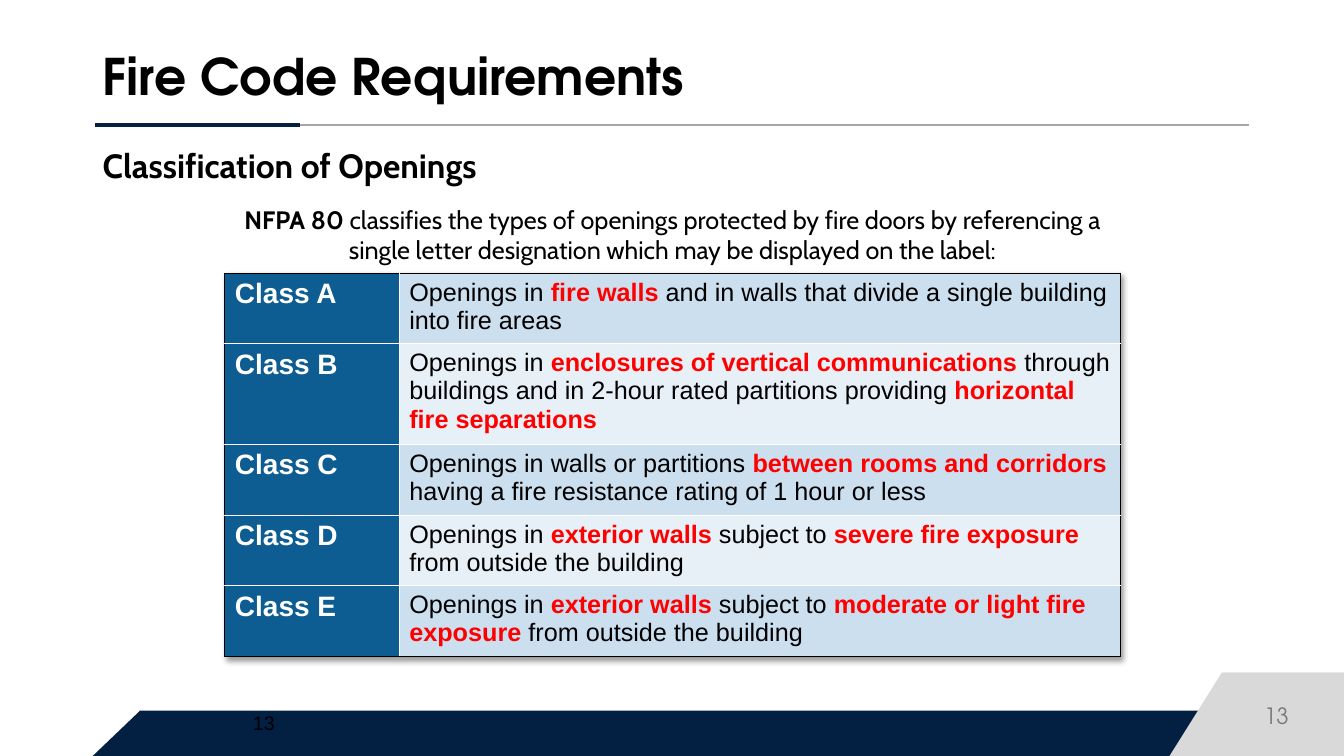
"""Build the slide on fire code classes of openings."""
from lxml.etree import SubElement
from pptx import Presentation
from pptx.dml.color import RGBColor
from pptx.enum.shapes import MSO_CONNECTOR, MSO_SHAPE
from pptx.enum.text import MSO_ANCHOR, PP_ALIGN
from pptx.oxml import parse_xml
from pptx.oxml.ns import nsdecls, qn
from pptx.util import Inches, Pt

BLACK = RGBColor(0x00, 0x00, 0x00)
WHITE = RGBColor(0xFF, 0xFF, 0xFF)
RED = RGBColor(0xFF, 0x00, 0x00)
NAVY = RGBColor(0x03, 0x20, 0x42)
BLUE = RGBColor(0x0E, 0x5D, 0x92)
BAND_DARK = RGBColor(0xCC, 0xDF, 0xEF)
BAND_LIGHT = RGBColor(0xE7, 0xF0, 0xF7)
PALE_GREY = RGBColor(0xD9, 0xD9, 0xD9)
RULE_GREY = RGBColor(0xA6, 0xA6, 0xA6)
NUMBER_GREY = RGBColor(0x79, 0x79, 0x79)

HEADING_FONT, BODY_FONT, TABLE_FONT = "TeX Gyre Adventor", "Cabin", "Arial"

CLASSES = [
    ("Class A", 0.66, "Openings in *fire walls *and in walls that divide a single building into fire areas"),
    ("Class B", 0.94, "Openings in *enclosures of vertical communications *through buildings and in "
                      "2-hour rated partitions providing *horizontal fire separations"),
    ("Class C", 0.66, "Openings in walls or partitions *between rooms and corridors* having a fire "
                      "resistance rating of 1 hour or less"),
    ("Class D", 0.66, "Openings in *exterior walls *subject to *severe fire exposure *from outside the building"),
    ("Class E", 0.66, "Openings in *exterior walls *subject to *moderate or light fire exposure *"
                      "from outside the building"),
]


def style(paragraph, font, size, color=None, bold=None):
    """Set the font of a whole paragraph."""
    paragraph.font.name = font
    paragraph.font.size = Pt(size)
    paragraph.font.bold = bold
    if color is not None:
        paragraph.font.color.rgb = color


def add_text(slide, box, text, font, size, color=BLACK, bold=None,
             align=PP_ALIGN.LEFT, anchor=MSO_ANCHOR.TOP):
    """Add a wrapped text box and return its paragraph."""
    frame = slide.shapes.add_textbox(*map(Inches, box)).text_frame
    frame.word_wrap = True
    frame.vertical_anchor = anchor
    paragraph = frame.paragraphs[0]
    paragraph.text = text
    paragraph.alignment = align
    style(paragraph, font, size, color, bold)
    return paragraph


def add_block(slide, kind, box, color):
    """Add a plain filled shape, with triangles rising to the right."""
    block = slide.shapes.add_shape(kind, *map(Inches, box))
    block.shadow.inherit = False
    block.fill.solid()
    block.fill.fore_color.rgb = color
    block.line.fill.background()
    if kind == MSO_SHAPE.RIGHT_TRIANGLE:
        block._element.spPr.find(qn("a:xfrm")).set("flipH", "1")


def add_footer(slide, left, bottom, right):
    """Draw the navy band, the grey corner and the page numbers."""
    ramps = [(left, 0.47, 10.63, 0.45, NAVY), (right - 1.73, 0.52, 1.21, 0.83, PALE_GREY)]
    for start, ramp, width, height, color in ramps:
        top = bottom - height
        add_block(slide, MSO_SHAPE.RIGHT_TRIANGLE, (start, top, ramp, height), color)
        add_block(slide, MSO_SHAPE.RECTANGLE, (start + ramp, top, width, height), color)
    add_text(slide, (right - 0.98, bottom - 0.6, 0.62, 0.4), "13", HEADING_FONT, 16,
             NUMBER_GREY, align=PP_ALIGN.CENTER, anchor=MSO_ANCHOR.MIDDLE)
    add_text(slide, (left + 1.49, bottom - 0.5, 0.6, 0.34), "13", TABLE_FONT, 14,
             anchor=MSO_ANCHOR.MIDDLE)


def add_header(slide, left, top, width):
    """Place the title, its two-tone rule and the subtitle."""
    title = add_text(slide, (left, top, width, 0.77), "Fire Code Requirements",
                     HEADING_FONT, 36, bold=True, anchor=MSO_ANCHOR.MIDDLE)
    title.line_spacing = 0.9
    rule_left, rule_y = Inches(left + 0.02), Inches(top + 0.84)
    for length, color, weight in [(11.45, RULE_GREY, 1.5), (2.04, NAVY, 2.5)]:
        rule = slide.shapes.add_connector(MSO_CONNECTOR.STRAIGHT, rule_left, rule_y,
                                          rule_left + Inches(length), rule_y)
        rule.line.color.rgb = color
        rule.line.width = Pt(weight)
        SubElement(rule._element.spPr, qn("a:effectLst"))
    add_text(slide, (left, top + 0.99, 6.83, 0.5), "Classification of Openings",
             BODY_FONT, 24, bold=True)


def add_intro(slide, box):
    """Place the centred sentence above the table."""
    intro = add_text(slide, box, "", BODY_FONT, 18, align=PP_ALIGN.CENTER)
    for text, bold in [("NFPA 80 ", True),
                       ("classifies the types of openings protected by fire doors by referencing a "
                        "single letter designation which may be displayed on the label:", False)]:
        run = intro.add_run()
        run.text = text
        run.font.bold = bold


def paint_cell(cell, fill, borders):
    """Set the left, right, top and bottom borders and the fill of a cell."""
    properties = cell._tc.get_or_add_tcPr()
    for side, color in zip("LRTB", borders):
        properties.append(parse_xml(
            f'<a:ln{side} {nsdecls("a")} w="12700"><a:solidFill><a:srgbClr val="{color}"/>'
            f'</a:solidFill></a:ln{side}>'))
    cell.fill.solid()
    cell.fill.fore_color.rgb = fill


def add_class_table(slide, left, top, width):
    """Draw the table of opening classes with a soft shadow."""
    label_width = 1.73
    total = sum(height for _, height, _ in CLASSES)
    table = slide.shapes.add_table(len(CLASSES), 2, *map(Inches, (left, top, width, total))).table
    table._tbl.tblPr.insert(0, parse_xml(
        f'<a:effectLst {nsdecls("a")}><a:outerShdw blurRad="50800" dist="38100" dir="2700000" '
        'algn="tl" rotWithShape="0"><a:srgbClr val="000000"><a:alpha val="40000"/></a:srgbClr>'
        '</a:outerShdw></a:effectLst>'))
    table.columns[0].width = Inches(label_width)
    table.columns[1].width = Inches(width - label_width)
    for index, (name, height, description) in enumerate(CLASSES):
        table.rows[index].height = Inches(height)
        upper = BLACK if index == 0 else WHITE
        lower = BLACK if index == len(CLASSES) - 1 else WHITE
        label, detail = table.cell(index, 0), table.cell(index, 1)
        paint_cell(label, BLUE, (BLACK, WHITE, upper, lower))
        paint_cell(detail, BAND_LIGHT if index % 2 else BAND_DARK, (WHITE, BLACK, upper, lower))
        label.text = name
        style(label.text_frame.paragraphs[0], TABLE_FONT, 20, WHITE, True)
        sentence = detail.text_frame.paragraphs[0]
        style(sentence, TABLE_FONT, 18)
        for part, text in enumerate(description.split("*")):
            run = sentence.add_run()
            run.text = text
            run.font.bold = part % 2 == 1
            run.font.color.rgb = RED if part % 2 else BLACK


def main():
    """Assemble and save the slide."""
    presentation = Presentation()
    presentation.slide_width, presentation.slide_height = Inches(13.33), Inches(7.5)
    slide = presentation.slides.add_slide(presentation.slide_layouts[6])
    add_footer(slide, 0.92, 7.5, 13.33)
    add_header(slide, 0.92, 0.4, 11.2)
    add_intro(slide, (2.23, 1.98, 8.88, 0.77))
    add_class_table(slide, 2.23, 2.71, 8.88)
    presentation.save("out.pptx")


if __name__ == "__main__":
    main()
